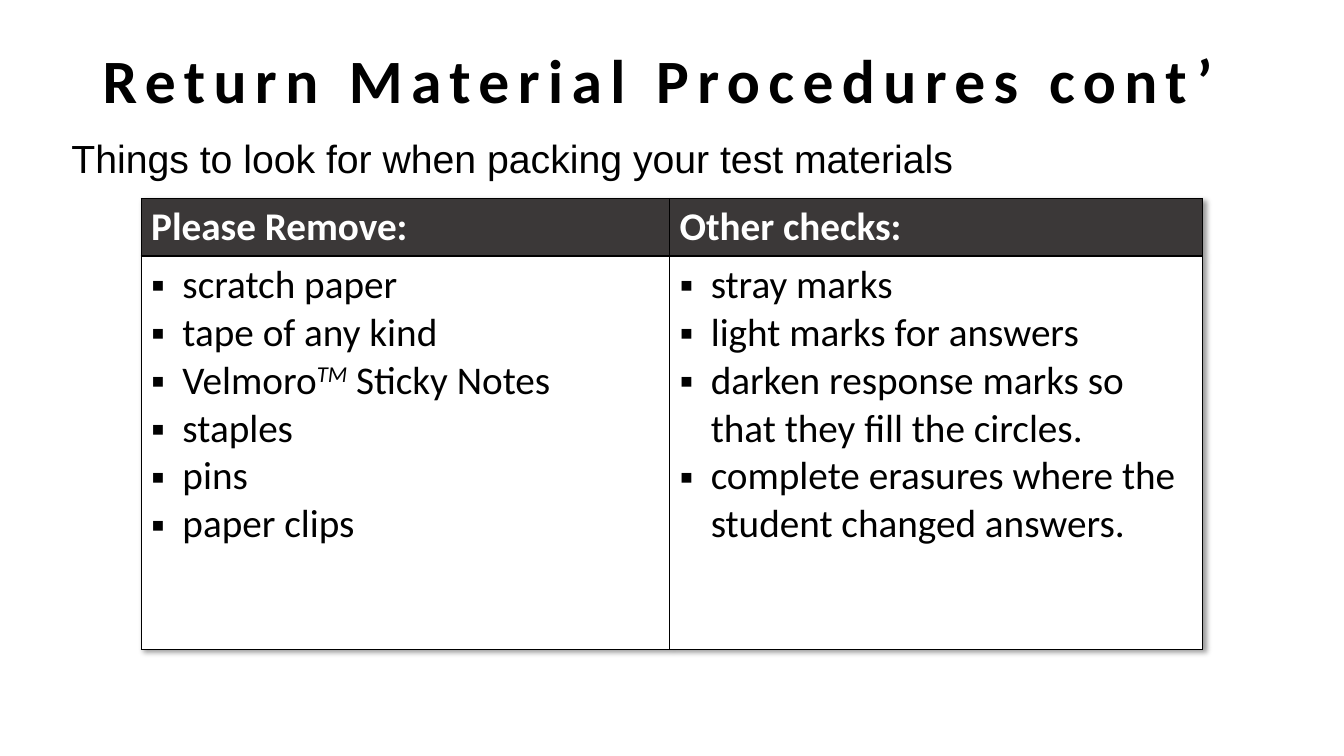
from lxml import etree
from pptx import Presentation
from pptx.dml.color import RGBColor
from pptx.enum import text as kinds
from pptx.oxml import ns
from pptx.util import Inches, Pt

BLACK, WHITE, DARK = "000000", "FFFFFF", "3B3838"
HEADS = ["Please Remove:", "Other checks:"]
LISTS = [
    ["scratch paper", "tape of any kind", ("Velmoro", "TM", " Sticky Notes"),
     "staples", "pins", "paper clips"],
    ["stray marks", "light marks for answers",
     "darken response marks so that they fill the circles.",
     "complete erasures where the student changed answers."],
]


def color(code):
    """Turn a hex string into a colour."""
    return RGBColor.from_string(code)


def add_xml(parent, tag, **attrs):
    """Append a DrawingML element with the given attributes."""
    return etree.SubElement(parent, ns.qn(tag), attrs)


def write(para, words, font="Calibri", size=28, ink=BLACK, bold=False,
          gap=0, lead=None, bullet=None):
    """Fill a paragraph; odd parts of a tuple become raised italics."""
    if lead:
        para.line_spacing = lead
    if bullet:
        props = para._p.get_or_add_pPr()
        props.set("marL", str(Inches(0.31)))
        props.set("indent", str(-Inches(0.31)))
        add_xml(props, "a:buFont", typeface="Arial")
        add_xml(props, "a:buChar", char=bullet)
    parts = (words,) if isinstance(words, str) else words
    for spot, part in enumerate(parts):
        run = para.add_run()
        run.text = part
        run.font.name, run.font.size, run.font.bold = font, Pt(size), bold
        run.font.color.rgb = color(ink)
        if gap:
            run._r.get_or_add_rPr().set("spc", str(gap * 100))
        if spot % 2:
            run.font.italic = True
            run._r.get_or_add_rPr().set("baseline", "30000")


def add_label(slide, left, top, width, height, words, **style):
    """Add a text box with one vertically centred paragraph."""
    box = slide.shapes.add_textbox(*map(Inches, (left, top, width, height)))
    frame = box.text_frame
    frame.word_wrap = True
    frame.vertical_anchor = kinds.MSO_ANCHOR.MIDDLE
    write(frame.paragraphs[0], words, lead=0.9, **style)


def fill_cell(cell, items, back, **style):
    """Give a cell its borders, fill and paragraphs."""
    props = cell._tc.get_or_add_tcPr()
    for side in "LRTB":
        line = add_xml(props, f"a:ln{side}", w=str(Pt(1)))
        add_xml(add_xml(line, "a:solidFill"), "a:srgbClr", val=BLACK)
    cell.fill.solid()
    cell.fill.fore_color.rgb = color(back)
    frame = cell.text_frame
    for spot, item in enumerate(items):
        para = frame.add_paragraph() if spot else frame.paragraphs[0]
        write(para, item, **style)


def add_shadow(table):
    """Put a soft shadow at the lower right of a table."""
    props = table._tbl.tblPr
    effects = add_xml(props, "a:effectLst")
    props.insert(0, effects)
    shade = add_xml(effects, "a:outerShdw", blurRad=str(Pt(4)),
                    dist=str(Pt(3)), dir="2700000", algn="tl",
                    rotWithShape="0")
    add_xml(add_xml(shade, "a:prstClr", val="black"), "a:alpha", val="40000")


def add_checks(slide):
    """Add the table of things to remove and to check."""
    table = slide.shapes.add_table(2, 2, Inches(1.4), Inches(1.97),
                                   Inches(10.53), Inches(4.47)).table
    table.horz_banding = False
    for col, width in zip(table.columns, (5.24, 5.29)):
        col.width = Inches(width)
    for row, height in zip(table.rows, (0.57, 3.9)):
        row.height = Inches(height)
    for spot, (head, items) in enumerate(zip(HEADS, LISTS)):
        fill_cell(table.cell(0, spot), [head], DARK, ink=WHITE, bold=True)
        fill_cell(table.cell(1, spot), items, WHITE, bullet="▪")
    add_shadow(table)


def main():
    """Build and save the slide."""
    deck = Presentation()
    deck.slide_width, deck.slide_height = Inches(13.33), Inches(7.5)
    slide = deck.slides.add_slide(deck.slide_layouts[6])
    add_label(slide, 0.61, 1.18, 12.05, 0.84,
              "Things to look for when packing your test materials",
              font="Arial")
    add_checks(slide)
    add_label(slide, 0.92, 0.4, 11.5, 0.85,
              "Return Material Procedures cont’", size=44, bold=True, gap=6)
    deck.save("out.pptx")


if __name__ == "__main__":
    main()
